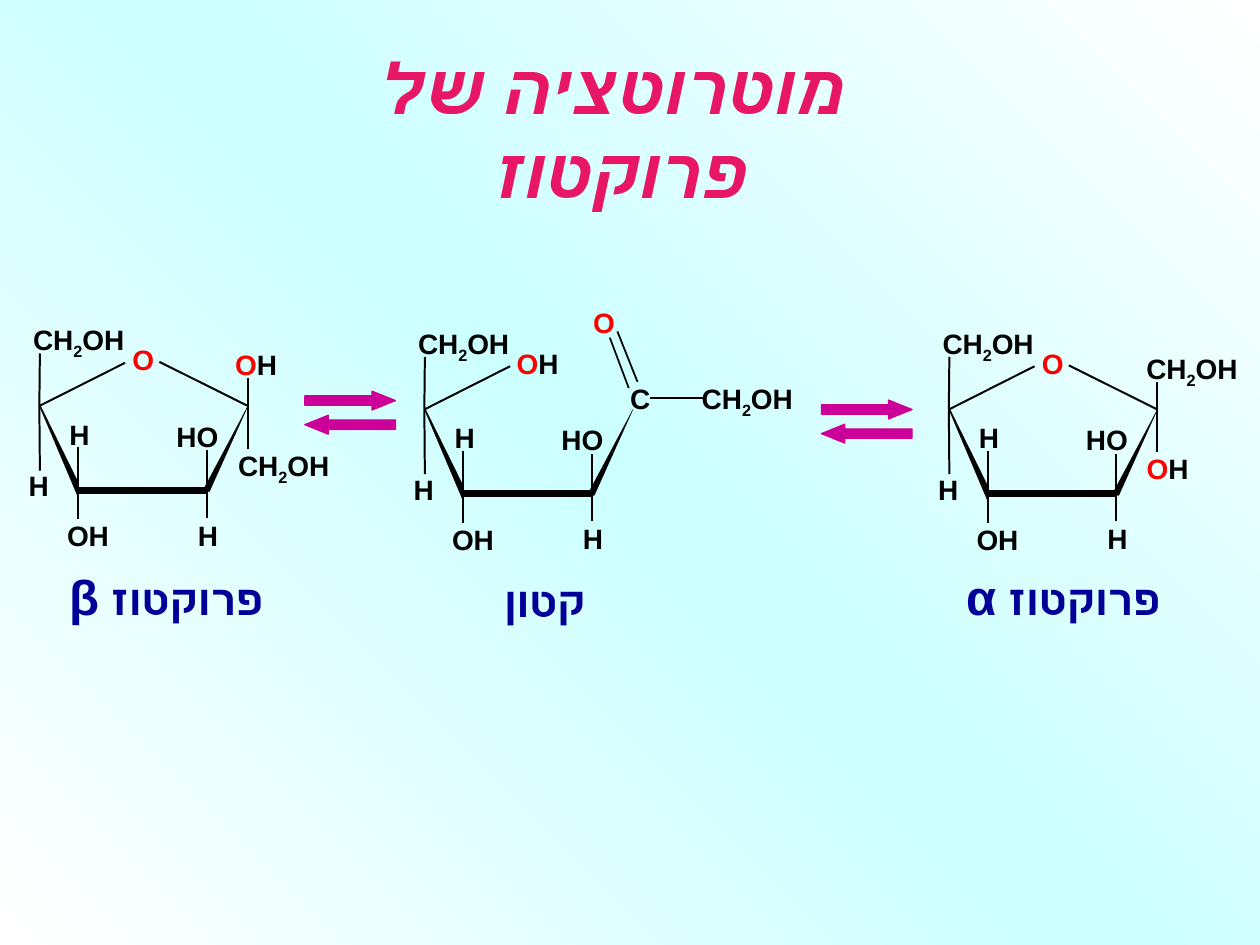
"""Build a slide on the mutarotation of fructose."""
from copy import deepcopy
from dataclasses import dataclass
from typing import Any, NamedTuple

from lxml import etree
from pptx import Presentation
from pptx import util as u
from pptx.dml.color import RGBColor
from pptx.enum import shapes, text
from pptx.oxml.ns import qn


@dataclass(frozen=True)
class Theme:
    font: str = "Arial"
    title: str = "E81766"
    atom: str = "000000"
    oxygen: str = "FF0000"
    name: str = "000099"
    arrow: str = "CC0099"
    background: tuple = ((0, "FFFFFF"), (0.5, "CCFFFF"), (1, "FFFFFF"))
    title_size: float = 40
    name_size: float = 24
    greek_size: float = 28
    atom_size: float = 16
    bond_width: float = 1.13
    double_bond_width: float = 1
    wedge_width: float = 0.13
    arrow_width: float = 0.75


THEME = Theme()


class Run(NamedTuple):
    text: str
    color: str = THEME.atom
    size: float = THEME.atom_size
    baseline: int = 0


class Style(NamedTuple):
    alignment: Any
    rtl: bool = True
    wrap: bool = True
    inset: tuple = (0, 0)


class Label(NamedTuple):
    left: float
    top: float
    width: float
    runs: tuple
    style: Style
    height: float = 19.4


class Bond(NamedTuple):
    start: tuple
    end: tuple
    width: float = THEME.bond_width


class Molecule(NamedTuple):
    left: float
    top: float
    bonds: tuple
    labels: tuple


CENTERED = Style(text.PP_ALIGN.CENTER)
ATOM = Style(text.PP_ALIGN.RIGHT, wrap=False)
GROUP = Style(text.PP_ALIGN.LEFT, rtl=False)
NAME = Style(text.PP_ALIGN.CENTER, inset=(7.2, 3.6))
RIGHT_NAME = NAME._replace(alignment=text.PP_ALIGN.RIGHT)

OXYGEN = (Run("O", THEME.oxygen),)
HYDROXYL = OXYGEN + (Run("H"),)
CH2OH = (Run("CH"), Run("2", baseline=-25000), Run("OH"))
HYDROGEN = (Run("H"),)

C5, C4, C3, C2 = (0, 0), (22.3, 48.2), (95.8, 48.2), (119.2, 0)
WEDGES = (
    ((22.3, 46.1), (95.8, 46.1), (95.8, 49.7), (22.3, 49.7)),
    ((94.3, 46.8), C2, (97.2, 49), (92.9, 49)),
    ((0.7, 0), C5, (22.3, 52.6), C4, (22.3, 43.9)),
)
SKELETON_BONDS = (
    Bond((49, -24.7), C5),
    Bond(C5, (0.3, -30)),
    Bond(C5, (0.3, 37)),
    Bond(C4, (22.3, 64.8)),
    Bond(C4, (22.3, 23.6)),
    Bond(C3, (95.8, 64)),
    Bond(C3, (95.8, 25.2)),
)
SKELETON_LABELS = (
    Label(-8.6, 36, 16.6, HYDROGEN, CENTERED),
    Label(90.4, 64.1, 11.8, HYDROGEN, ATOM),
    Label(15.6, 64.5, 12.6, (Run("O"),), ATOM),
    Label(27.9, 64.5, 11.8, HYDROGEN, ATOM),
    Label(17, 6.5, 11.8, HYDROGEN, ATOM),
    Label(77.5, 7.6, 24.8, (Run("HO"),), ATOM),
    Label(-3.6, -47.5, 64.8, CH2OH, GROUP, 28.8),
)
RING_BONDS = (
    Bond(C2, (68.6, -25.2)),
    Bond(C2, (119.2, -15.8)),
    Bond(C2, (119.2, 24.5)),
)
RING_OXYGEN = Label(53, -36, 12.6, OXYGEN, ATOM)
CARBONYL = Bond((121.8, -15.8), (110.3, -44.6), THEME.double_bond_width)

MOLECULES = (
    Molecule(22.5, 232, RING_BONDS, (
        RING_OXYGEN,
        Label(102.2, -33.4, 43.2, HYDROXYL, CENTERED),
        Label(113.6, 24.5, 64.8, CH2OH, GROUP, 28.8))),
    Molecule(242.5, 234, (
        CARBONYL,
        Bond((116.8, -12.2), (106, -41), THEME.double_bond_width),
        Bond((129, -6.5), (160, -6.5))), (
        Label(81.1, -59.3, 43.2, OXYGEN, CENTERED),
        Label(52.7, -36, 24.8, HYDROXYL, GROUP),
        Label(158.5, -15.8, 64.8, CH2OH, GROUP, 28.8),
        Label(117.5, -15.8, 30.2, (Run("C"),), GROUP, 28.8))),
    Molecule(542.2, 234, RING_BONDS, (
        RING_OXYGEN,
        Label(105.1, -33.1, 67.7, CH2OH, CENTERED),
        Label(113, 24.2, 64.8, HYDROXYL, GROUP, 28.8))),
)
FRUCTOSE = Run("פרוקטוז ", THEME.name, THEME.name_size)
NAMES = (
    Label(29.5, 320.4, 131, (FRUCTOSE, Run("β", THEME.name, THEME.greek_size)), NAME, 41),
    Label(266.4, 325.4, 90, (FRUCTOSE._replace(text="קטון"),), NAME, 36),
    Label(539.3, 320.4, 131, (FRUCTOSE, Run("α", THEME.name, THEME.greek_size)), RIGHT_NAME, 41),
)
EQUILIBRIA = ((174.2, 223.5), (469.4, 228.6))


def apply(target: Any, values: dict) -> None:
    for name, value in values.items():
        setattr(target, name, value)


def write(paragraph: Any, runs: tuple, style: Style, **extra: Any) -> None:
    paragraph.alignment = style.alignment
    if style.rtl:
        paragraph._p.get_or_add_pPr().set("rtl", "1")
    for item in runs:
        run = paragraph.add_run()
        run.text = item.text
        apply(run.font, {"name": THEME.font, "size": u.Pt(item.size), "bold": True, **extra})
        run.font.color.rgb = RGBColor.from_string(item.color)
        if item.baseline:
            run._r.get_or_add_rPr().set("baseline", str(item.baseline))


def draw_label(slide: Any, label: Label, left: float = 0, top: float = 0) -> None:
    shape = slide.shapes.add_textbox(u.Pt(left + label.left), u.Pt(top + label.top),
                                     u.Pt(label.width), u.Pt(label.height))
    across, down = map(u.Pt, label.style.inset)
    apply(shape.text_frame, {"word_wrap": label.style.wrap, "margin_left": across,
                             "margin_right": across, "margin_top": down, "margin_bottom": down,
                             "auto_size": text.MSO_AUTO_SIZE.SHAPE_TO_FIT_TEXT})
    write(shape.text_frame.paragraphs[0], label.runs, label.style)


def draw_bond(slide: Any, bond: Bond, left: float, top: float) -> None:
    ends = [u.Pt(a + b) for point in (bond.start, bond.end) for a, b in zip(point, (left, top))]
    line = slide.shapes.add_connector(shapes.MSO_CONNECTOR.STRAIGHT, *ends)
    line.line.width = u.Pt(bond.width)
    line.line.color.rgb = RGBColor.from_string(THEME.atom)
    etree.SubElement(line._element.spPr, qn("a:effectLst"))


def paint(shape: Any, color: str, width: float) -> None:
    shape.shadow.inherit = False
    shape.fill.solid()
    shape.fill.fore_color.rgb = shape.line.color.rgb = RGBColor.from_string(color)
    shape.line.width = u.Pt(width)


def draw_wedge(slide: Any, points: tuple, left: float, top: float) -> None:
    first, *rest = [(u.Pt(left + x), u.Pt(top + y)) for x, y in points]
    builder = slide.shapes.build_freeform(*first)
    builder.add_line_segments(rest, close=True)
    paint(builder.convert_to_shape(), THEME.atom, THEME.wedge_width)


def draw_molecule(slide: Any, molecule: Molecule) -> None:
    origin = molecule.left, molecule.top
    for draw, items in ((draw_wedge, WEDGES), (draw_bond, SKELETON_BONDS + molecule.bonds),
                        (draw_label, SKELETON_LABELS + molecule.labels)):
        for item in items:
            draw(slide, item, *origin)


def draw_equilibrium(slide: Any, left: float, top: float) -> None:
    for drop, flip in ((0, "0"), (13.8, "1")):
        shape = slide.shapes.add_shape(shapes.MSO_SHAPE.RIGHT_ARROW, u.Pt(left),
                                       u.Pt(top + drop), u.Pt(51.8), u.Pt(10.8))
        shape.adjustments[0], shape.adjustments[1] = 0.5, 1.24
        shape._element.spPr.xfrm.set("flipH", flip)
        paint(shape, THEME.arrow, THEME.arrow_width)


def draw_background(slide: Any) -> None:
    fill = slide.background.fill
    fill.gradient()
    fill.gradient_angle = 45
    stops = next(slide.element.iter(qn("a:gsLst")))
    stops.append(deepcopy(stops[0]))
    for stop, (position, color) in zip(fill.gradient_stops, THEME.background):
        stop.position = position
        stop.color.rgb = RGBColor.from_string(color)


def main() -> None:
    presentation = Presentation()
    apply(presentation, {"slide_width": u.Pt(720), "slide_height": u.Pt(540)})
    slide = presentation.slides.add_slide(presentation.slide_layouts[5])
    draw_background(slide)
    title = slide.shapes.title
    apply(title, {"left": u.Pt(169.2), "top": u.Pt(21), "width": u.Pt(360), "height": u.Pt(104.4)})
    write(title.text_frame.paragraphs[0],
          (Run("מוטרוטציה של פרוקטוז ", THEME.title, THEME.title_size),), CENTERED, italic=True)
    for molecule in MOLECULES:
        draw_molecule(slide, molecule)
    for left, top in EQUILIBRIA:
        draw_equilibrium(slide, left, top)
    for label in NAMES:
        draw_label(slide, label)
    presentation.save("out.pptx")


if __name__ == "__main__":
    main()
